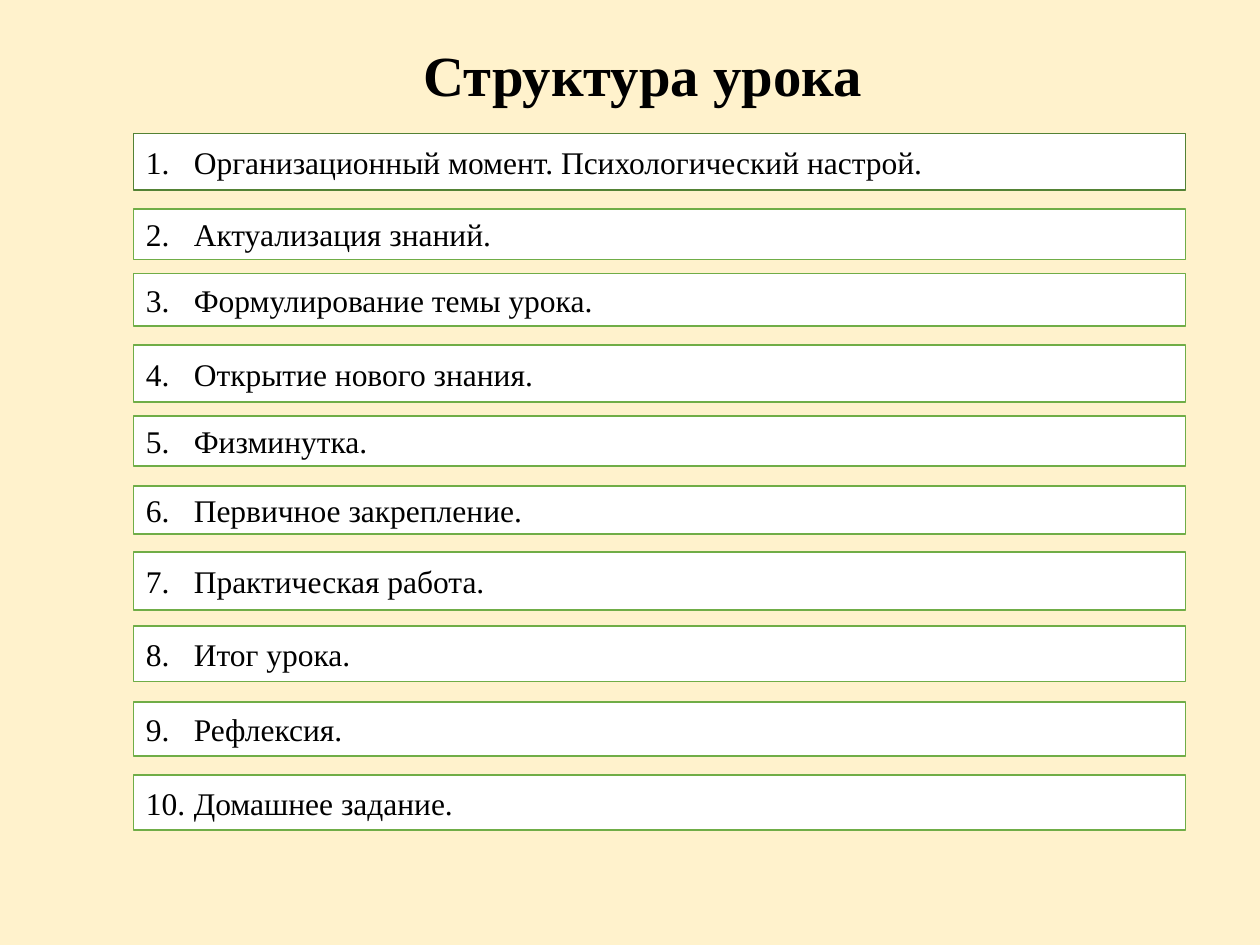
import pptx
import pptx.util
import pptx.dml.color
import pptx.enum.shapes
import pptx.enum.text
import pptx.oxml.ns
import lxml.etree

Inches = pptx.util.Inches
Align = pptx.enum.text.PP_ALIGN
Anchor = pptx.enum.text.MSO_ANCHOR

COLORS = {
    "page": "FFF2CC",
    "box": "FFFFFF",
    "first": "548235",
    "line": "70AD47",
    "text": "000000",
}

STEPS = [
    ("Организационный момент. Психологический настрой.", 1.06, 0.45),
    ("Актуализация знаний.", 1.66, 0.4),
    ("Формулирование темы урока.", 2.17, 0.42),
    ("Открытие нового знания.", 2.74, 0.45),
    ("Физминутка.", 3.3, 0.4),
    ("Первичное закрепление.", 3.86, 0.38),
    ("Практическая работа.", 4.38, 0.46),
    ("Итог урока.", 4.97, 0.44),
    ("Рефлексия.", 5.57, 0.43),
    ("Домашнее задание.", 6.15, 0.44),
]


def color(name):
    return pptx.dml.color.RGBColor.from_string(COLORS[name])


def write(frame, text, font="Times New Roman", size=18, bold=False,
          align=Align.JUSTIFY, anchor=Anchor.MIDDLE, space=None):
    frame.word_wrap = True
    frame.auto_size = pptx.enum.text.MSO_AUTO_SIZE.NONE
    frame.vertical_anchor = anchor
    para = frame.paragraphs[0]
    para.alignment = align
    para.line_spacing = space
    run = para.add_run()
    run.text = text
    run.font.name = font
    run.font.size = pptx.util.Pt(size)
    run.font.bold = bold
    run.font.color.rgb = color("text")
    return para


def number(para, start, indent=0.38):
    props = para._p.get_or_add_pPr()
    props.set("marL", str(Inches(indent)))
    props.set("indent", str(-Inches(indent)))
    lxml.etree.SubElement(props, pptx.oxml.ns.qn("a:buFont"), typeface="+mj-lt")
    lxml.etree.SubElement(props, pptx.oxml.ns.qn("a:buAutoNum"),
                          type="arabicPeriod", startAt=str(start))


class Deck:
    def __init__(self):
        self.show = pptx.Presentation()
        self.show.slide_width = Inches(10)
        self.show.slide_height = Inches(7.5)
        self.slide = self.show.slides.add_slide(self.show.slide_layouts[5])
        fill = self.slide.background.fill
        fill.solid()
        fill.fore_color.rgb = color("page")

    def title(self, text, left, top, width, height):
        shape = self.slide.shapes.title
        shape.left, shape.top = Inches(left), Inches(top)
        shape.width, shape.height = Inches(width), Inches(height)
        write(shape.text_frame, text, size=32.4, bold=True,
              align=Align.CENTER, anchor=Anchor.TOP, space=0.9)

    def step(self, index, text, top, height, line="line", align=Align.JUSTIFY):
        shape = self.slide.shapes.add_shape(
            pptx.enum.shapes.MSO_SHAPE.RECTANGLE,
            Inches(1.06), Inches(top), Inches(8.35), Inches(height))
        shape.shadow.inherit = False
        shape.fill.solid()
        shape.fill.fore_color.rgb = color("box")
        shape.line.color.rgb = color(line)
        shape.line.width = pptx.util.Pt(1)
        number(write(shape.text_frame, text, align=align), index)

    def save(self):
        self.show.save("out.pptx")


def main():
    deck = Deck()
    deck.title("Структура урока", 0.79, 0.33, 8.62, 1.13)
    for index, (text, top, height) in enumerate(STEPS, 1):
        deck.step(index, text, top, height,
                  line="first" if index == 1 else "line",
                  align=Align.LEFT if index == len(STEPS) else Align.JUSTIFY)
    deck.save()


if __name__ == "__main__":
    main()
